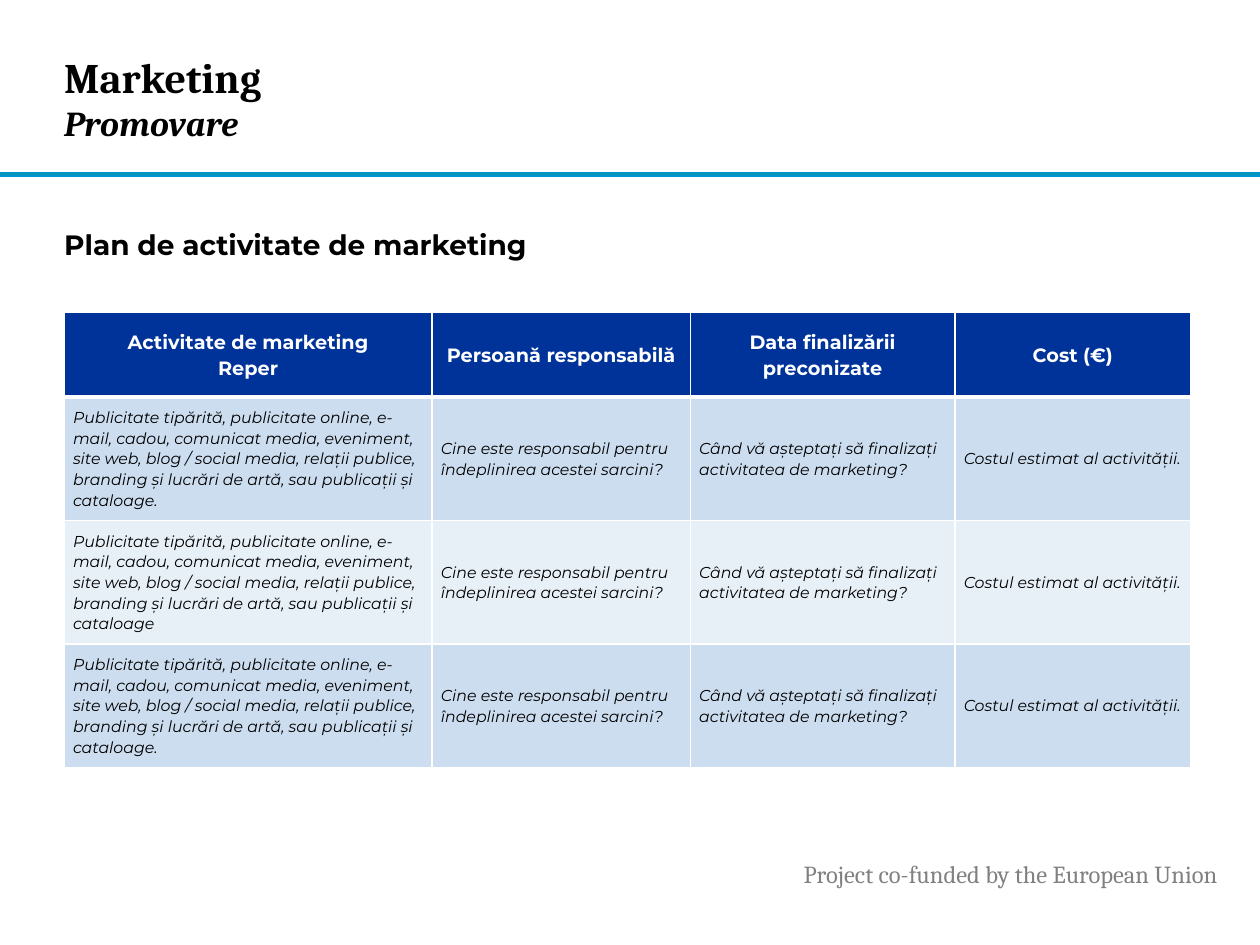
from lxml.etree import SubElement
from pptx import Presentation
from pptx.dml.color import RGBColor
from pptx.enum.shapes import MSO_SHAPE
from pptx.enum.text import MSO_ANCHOR, PP_ALIGN
from pptx.oxml.ns import qn
from pptx.util import Inches, Pt

WIDTH, HEIGHT = 10, 7.5
MARGIN = 0.51
SERIF, SANS = "Cambria", "Montserrat"

COLUMNS = [2.92, 2.05, 2.1, 1.87]
ROWS = [0.67, 0.98, 0.98, 0.98]
ROW_FILLS = ["003399", "CCDDEF", "E7EFF7", "CCDDEF"]
HEADERS = ["Activitate de marketing\nReper", "Persoană responsabilă",
           "Data finalizării preconizate", "Cost (€)"]
HEADER_SPACE_AFTER = [0, 8, 0, 8]
ACTIVITY = ("Publicitate tipărită, publicitate online, e-mail, cadou, comunicat media, "
            "eveniment, site web, blog / social media, relații publice, branding și "
            "lucrări de artă, sau publicații și cataloage")
DETAILS = ["Cine este responsabil pentru îndeplinirea acestei sarcini?",
           "Când vă așteptați să finalizați activitatea de marketing?",
           "Costul estimat al activității."]
BODY = [[ACTIVITY + end, *DETAILS] for end in (".", "", ".")]


def color(value):
    return RGBColor.from_string(value)


def style(run, font, size, fill="000000", bold=False, italic=False):
    f = run.font
    f.name, f.size, f.bold, f.italic = font, Pt(size), bold, italic
    f.color.rgb = color(fill)


def add_text_box(s, box, insets=(0.1, 0.05), anchor=MSO_ANCHOR.TOP):
    tf = s.shapes.add_textbox(*map(Inches, box)).text_frame
    tf.word_wrap = True
    tf.vertical_anchor = anchor
    tf.margin_left = tf.margin_right = Inches(insets[0])
    tf.margin_top = tf.margin_bottom = Inches(insets[1])
    return tf


def add_header(s, box):
    """Two-line title with a rule across the slide along the bottom of the box."""
    left, top, width, height = box
    tf = add_text_box(s, box, (0, 0), MSO_ANCHOR.MIDDLE)
    p = tf.paragraphs[0]
    p.text = "Marketing\vPromovare"
    title, subtitle = p.runs
    style(title, SERIF, 24, bold=True)
    style(subtitle, SERIF, 20, bold=True, italic=True)

    rule = s.shapes.add_shape(MSO_SHAPE.RECTANGLE, 0, Inches(top + height),
                              Inches(WIDTH), Inches(0.03))
    rule.shadow.inherit = False
    rule.fill.solid()
    rule.fill.fore_color.rgb = color("0C94B7")
    rule.line.color.rgb = color("0096D3")
    rule.line.width = Pt(1)


def add_heading(s, box):
    tf = add_text_box(s, box, (0, 0.05))
    tf.text = "Plan de activitate de marketing"
    style(tf.paragraphs[0].runs[0], SANS, 16, bold=True)


def add_footer(s, box):
    tf = add_text_box(s, box)
    tf.text = "Project co-funded by the European Union"
    style(tf.paragraphs[0].runs[0], SERIF, 14, "808080")


def set_borders(cell, bottom):
    """White borders; they have to come before the fill in the cell properties."""
    props = cell._tc.get_or_add_tcPr()
    for i, (side, points) in enumerate(zip("LRTB", (1, 1, 1, bottom))):
        ln = SubElement(props, qn(f"a:ln{side}"), w=str(Pt(points)))
        SubElement(SubElement(ln, qn("a:solidFill")), qn("a:srgbClr"), val="FFFFFF")
        props.insert(i, ln)


def fill_cell(cell, text, fill, header, space_after):
    cell.fill.solid()
    cell.fill.fore_color.rgb = color(fill)
    cell.vertical_anchor = MSO_ANCHOR.MIDDLE
    cell.margin_left = cell.margin_right = Inches(0.07)
    cell.margin_top = cell.margin_bottom = 0
    cell.text_frame.text = text
    for p in cell.text_frame.paragraphs:
        p.alignment = PP_ALIGN.CENTER if header else PP_ALIGN.LEFT
        p.line_spacing = 1.07
        p.space_after = Pt(space_after)
        if header:
            style(p.runs[0], SANS, 11, "FFFFFF", bold=True)
        else:
            style(p.runs[0], SANS, 9, italic=True)


def add_plan_table(s, left, top):
    table = s.shapes.add_table(len(ROWS), len(COLUMNS), Inches(left), Inches(top),
                               Inches(sum(COLUMNS)), Inches(sum(ROWS))).table
    for column, width in zip(table.columns, COLUMNS):
        column.width = Inches(width)
    for row, height in zip(table.rows, ROWS):
        row.height = Inches(height)
    for r, texts in enumerate([HEADERS, *BODY]):
        header = r == 0
        for c, text in enumerate(texts):
            cell = table.cell(r, c)
            space_after = HEADER_SPACE_AFTER[c] if header else 8
            fill_cell(cell, text, ROW_FILLS[r], header, space_after)
            set_borders(cell, bottom=3 if header else 1)


def main():
    prs = Presentation()
    prs.slide_width, prs.slide_height = Inches(WIDTH), Inches(HEIGHT)
    s = prs.slides.add_slide(prs.slide_layouts[6])
    add_footer(s, (6.28, 6.77, 3.66, 0.34))
    add_header(s, (MARGIN, 0.18, 7.27, 1.19))
    add_heading(s, (MARGIN, 1.76, 8.49, 0.5))
    add_plan_table(s, MARGIN, 2.48)
    prs.save("out.pptx")


if __name__ == "__main__":
    main()
